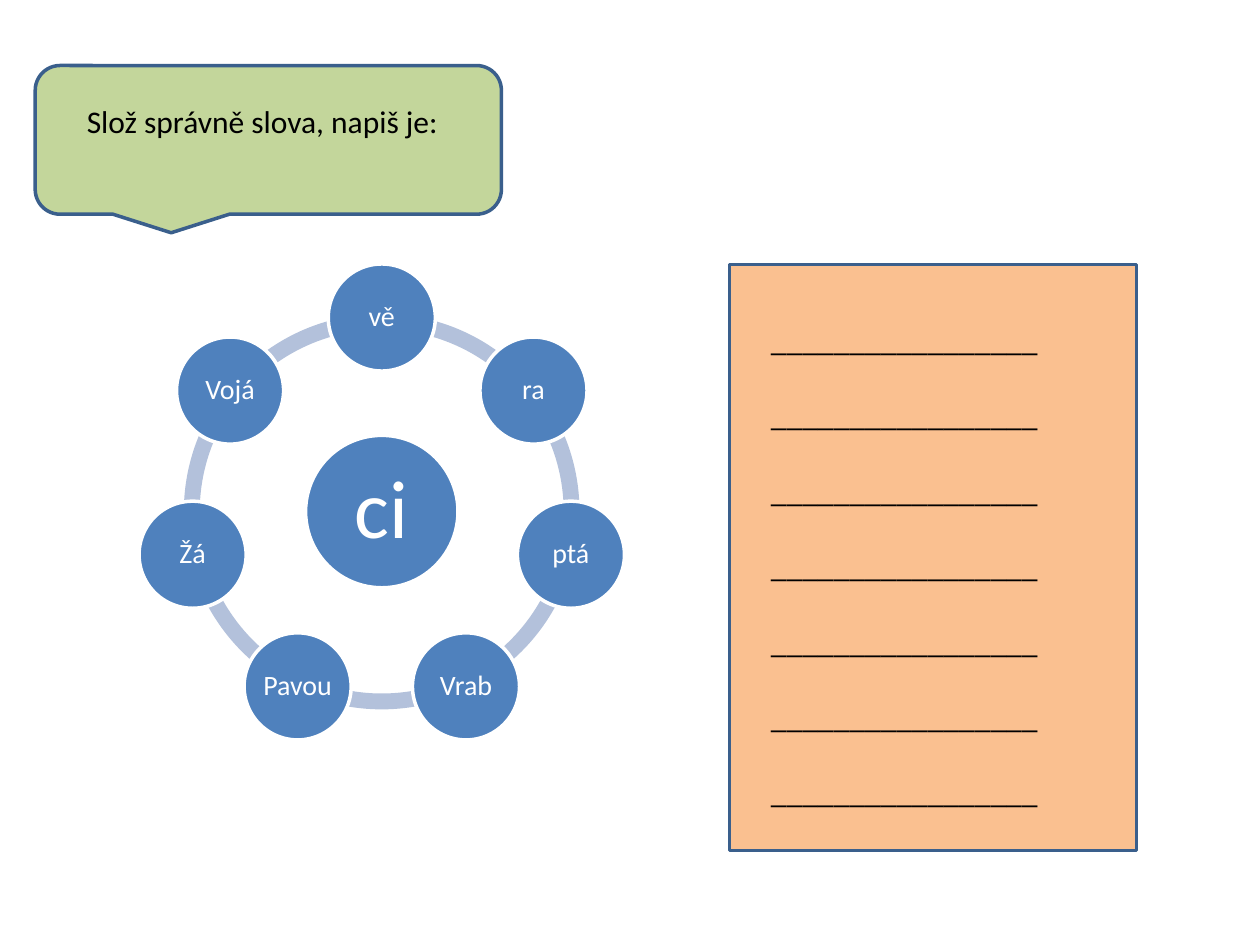
from math import cos, pi, sin

from pptx import Presentation
from pptx.dml.color import RGBColor
from pptx.enum.shapes import MSO_SHAPE
from pptx.enum.text import MSO_ANCHOR, PP_ALIGN
from pptx.util import Inches, Pt

RECTANGLE = MSO_SHAPE.RECTANGLE
CALLOUT = MSO_SHAPE.ROUNDED_RECTANGULAR_CALLOUT
OVAL = MSO_SHAPE.OVAL
BLOCK_ARC = MSO_SHAPE.BLOCK_ARC
MIDDLE = MSO_ANCHOR.MIDDLE
CENTER = PP_ALIGN.CENTER

BLACK = RGBColor(0x00, 0x00, 0x00)
WHITE = RGBColor(0xFF, 0xFF, 0xFF)
BLUE = RGBColor(0x4F, 0x81, 0xBD)
PALE_BLUE = RGBColor(0xB3, 0xC1, 0xDB)
DARK_BLUE = RGBColor(0x3A, 0x5F, 0x8C)
GREEN = RGBColor(0xC3, 0xD6, 0x9B)
ORANGE = RGBColor(0xFA, 0xC0, 0x90)

COLUMNS, ROWS = 100, 75
CENTER_COLUMN, CENTER_ROW = 30.3, 40.6
ORBIT, RING_SIZE, HUB_SIZE, NODE_SIZE = 15.4, 31.4, 12.1, 8.5
FULL_TURN, TOP_ANGLE, RING_THICKNESS = 216, 162, 0.04
HUB_WORD = "ci"
NODE_WORDS = ["vě", "ra", "ptá", "Vrab", "Pavou", "Žá", "Vojá"]
ANSWER_LINE = "_" * 17


class Worksheet:
    font = "Calibri"
    body_size = 18

    def __init__(self, deck):
        self.cell_width = deck.slide_width / COLUMNS
        self.cell_height = deck.slide_height / ROWS
        self.slide = deck.slides.add_slide(deck.slide_layouts[6])

    def place(self, column, row, width, height):
        return (
            round(column * self.cell_width),
            round(row * self.cell_height),
            round(width * self.cell_width),
            round(height * self.cell_height),
        )

    def fill_para(self, para, words, size, color):
        para.text = words
        for span in para.runs:
            span.font.name = self.font
            span.font.size = Pt(size)
            span.font.color.rgb = color

    def shape(self, kind, area, fill, line=None):
        shape = self.slide.shapes.add_shape(kind, *self.place(*area))
        shape.shadow.inherit = False
        shape.fill.solid()
        shape.fill.fore_color.rgb = fill
        if line is None:
            shape.line.fill.background()
        else:
            shape.line.color.rgb = line
            shape.line.width = Pt(2)
        return shape

    def text(self, area, lines, gap=0):
        box = self.slide.shapes.add_textbox(*self.place(*area))
        frame = box.text_frame
        frame.word_wrap = True
        for index, words in enumerate(lines):
            para = frame.add_paragraph() if index else frame.paragraphs[0]
            para.space_after = Pt(gap)
            self.fill_para(para, words, self.body_size, BLACK)

    def circle(self, column, row, diameter, words, size):
        area = (column - diameter / 2, row - diameter / 2, diameter, diameter)
        frame = self.shape(OVAL, area, BLUE, WHITE).text_frame
        frame.word_wrap = False
        frame.vertical_anchor = MIDDLE
        frame.margin_left = frame.margin_right = Inches(0.02)
        frame.margin_top = frame.margin_bottom = Inches(0.02)
        para = frame.paragraphs[0]
        para.alignment = CENTER
        para.line_spacing = 0.9
        self.fill_para(para, words, size, WHITE)

    def ring(self, parts):
        area = (
            CENTER_COLUMN - RING_SIZE / 2,
            CENTER_ROW - RING_SIZE / 2,
            RING_SIZE,
            RING_SIZE,
        )
        step = FULL_TURN / parts
        for index in range(parts):
            start = TOP_ANGLE + index * step
            arc = self.shape(BLOCK_ARC, area, PALE_BLUE)
            arc.adjustments[0] = start % FULL_TURN
            arc.adjustments[1] = (start + step) % FULL_TURN
            arc.adjustments[2] = RING_THICKNESS

    def wheel(self, hub, words):
        self.ring(len(words))
        self.circle(CENTER_COLUMN, CENTER_ROW, HUB_SIZE, hub, 47)
        for index, word in enumerate(words):
            angle = 2 * pi * index / len(words)
            column = CENTER_COLUMN + ORBIT * sin(angle)
            row = CENTER_ROW - ORBIT * cos(angle)
            self.circle(column, row, NODE_SIZE, word, 16)


def main():
    deck = Presentation()
    deck.slide_width = Inches(10)
    deck.slide_height = Inches(7.5)
    sheet = Worksheet(deck)
    sheet.shape(RECTANGLE, (57.9, 21, 32.3, 46.5), ORANGE, DARK_BLUE)
    sheet.shape(CALLOUT, (2.8, 5.2, 37, 11.8), GREEN, DARK_BLUE)
    sheet.text((5.9, 7.6, 31.5, 4), ["Slož správně slova, napiš je:"])
    sheet.wheel(HUB_WORD, NODE_WORDS)
    sheet.text((60.2, 24.9, 24.4, 40.4), [ANSWER_LINE] * len(NODE_WORDS), 21.5)
    deck.save("out.pptx")


if __name__ == "__main__":
    main()
